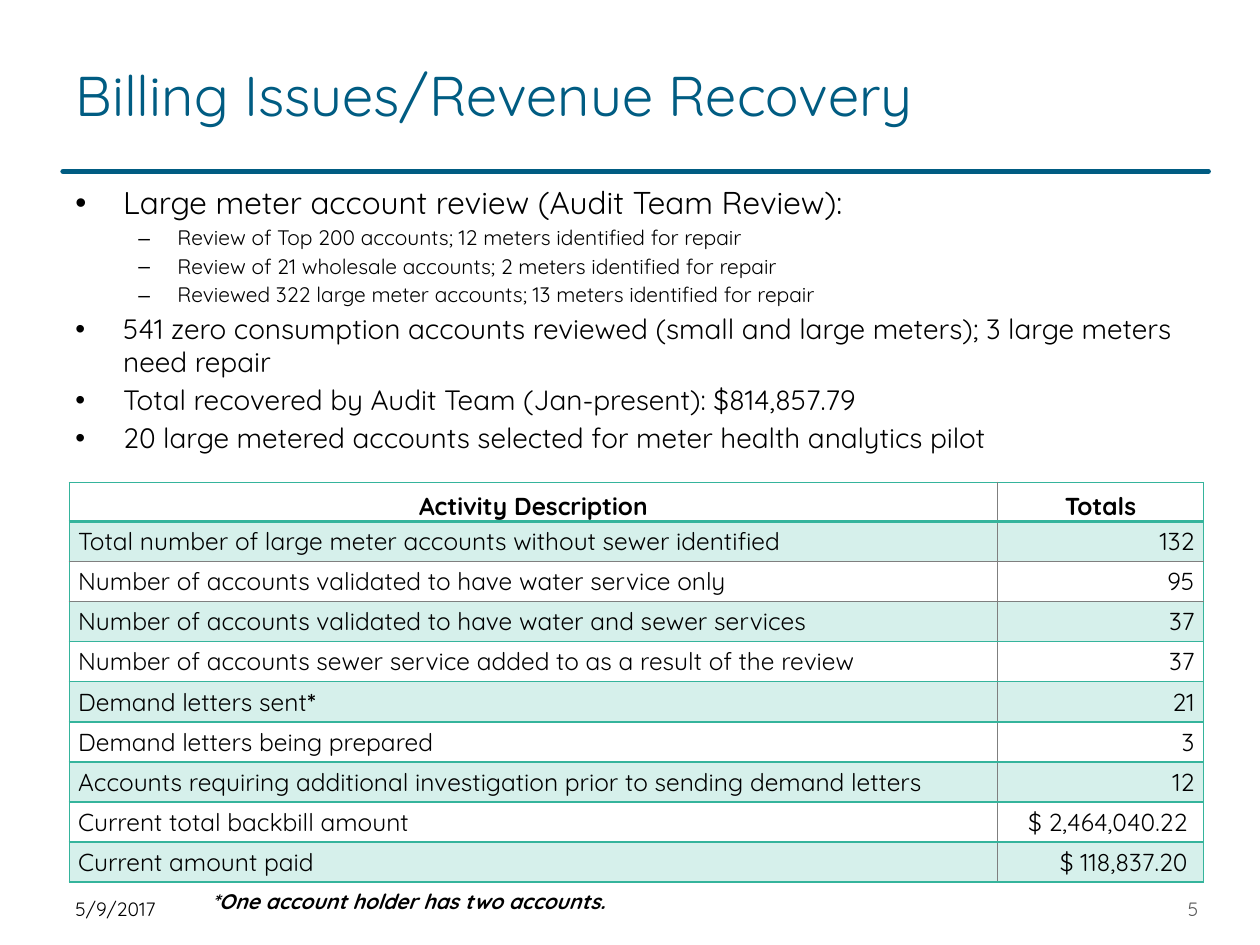
from lxml.etree import SubElement
from pptx import Presentation
from pptx.dml.color import RGBColor
from pptx.enum.shapes import MSO_CONNECTOR
from pptx.enum.text import MSO_ANCHOR, PP_ALIGN
from pptx.oxml.ns import qn
from pptx.util import Inches, Pt

FONT = "Quicksand"
BLACK = "000000"
GRAY = "595959"
BLUE = "005C82"
GREEN = "35B49C"
RULE_GRAY = "7F7F7F"

BULLETS = [
    (0, 18, "Large meter account review (Audit Team Review):"),
    (1, 12, "Review of Top 200 accounts; 12 meters identified for repair"),
    (1, 12, "Review of 21 wholesale accounts; 2 meters identified for repair"),
    (1, 12, "Reviewed 322 large meter accounts; 13 meters identified for repair"),
    (0, 16, "541 zero consumption accounts reviewed (small and large meters); "
            "3 large meters need repair"),
    (0, 16, "Total recovered by Audit Team (Jan-present): $814,857.79"),
    (0, 16, "20 large metered accounts selected for meter health analytics pilot"),
]
BULLET_STYLES = [("•", 0.38, 0.38), ("–", 0.81, 0.31)]

HEADINGS = ("Activity Description", "Totals")
ACTIVITIES = [
    ("Total number of large meter accounts without sewer identified", "132"),
    ("Number of accounts validated to have water service only", "95"),
    ("Number of accounts validated to have water and sewer services", "37"),
    ("Number of accounts sewer service added to as a result of the review", "37"),
    ("Demand letters sent*", "21"),
    ("Demand letters being prepared", "3"),
    ("Accounts requiring additional investigation prior to sending demand letters", "12"),
    ("Current total backbill amount", "$ 2,464,040.22 "),
    ("Current amount paid", "$ 118,837.20 "),
]


def color(value):
    return RGBColor.from_string(value)


def add_run(paragraph, text, size, fill=BLACK, bold=False, italic=False):
    run = paragraph.add_run()
    run.text = text
    font = run.font
    font.name, font.size = FONT, Pt(size)
    font.bold, font.italic = bold, italic
    font.color.rgb = color(fill)


def add_text_box(slide, box, anchor=MSO_ANCHOR.TOP, vertical_margin=0.05):
    shape = slide.shapes.add_textbox(*map(Inches, box))
    frame = shape.text_frame
    frame.word_wrap = True
    frame.vertical_anchor = anchor
    frame.margin_top = frame.margin_bottom = Inches(vertical_margin)
    return frame


def add_title(slide, box, text):
    title = slide.shapes.title
    title.left, title.top, title.width, title.height = map(Inches, box)
    title.text_frame.vertical_anchor = MSO_ANCHOR.MIDDLE
    paragraph = title.text_frame.paragraphs[0]
    paragraph.alignment = PP_ALIGN.LEFT
    add_run(paragraph, text, 32, BLUE)


def add_divider(slide, left, top, width):
    line = slide.shapes.add_connector(
        MSO_CONNECTOR.STRAIGHT, Inches(left), Inches(top), Inches(left + width), Inches(top))
    line.line.color.rgb = color(BLUE)
    line.line.width = Pt(3)
    properties = line._element.spPr
    properties.find(qn("a:ln")).set("cap", "rnd")
    SubElement(properties, qn("a:effectLst"))


def add_bullets(slide, box, items):
    frame = add_text_box(slide, box)
    for index, (level, size, text) in enumerate(items):
        paragraph = frame.paragraphs[0] if index == 0 else frame.add_paragraph()
        mark, margin, hanging = BULLET_STYLES[level]
        paragraph.level = level
        paragraph.line_spacing = 0.97
        if index:
            paragraph.space_before = Pt(size * 0.2)
        properties = paragraph._p.get_or_add_pPr()
        properties.set("marL", str(Inches(margin)))
        properties.set("indent", str(-Inches(hanging)))
        SubElement(properties, qn("a:buFont"), typeface="Arial")
        SubElement(properties, qn("a:buChar"), char=mark)
        add_run(paragraph, text, size)


def set_borders(cell, sides):
    properties = cell._tc.get_or_add_tcPr()
    for position, side in enumerate(("L", "R", "T", "B")):
        line_color, width = sides[side]
        line = properties.makeelement(qn(f"a:ln{side}"), {"w": str(Pt(width))})
        fill = SubElement(line, qn("a:solidFill"))
        SubElement(fill, qn("a:srgbClr"), val=line_color)
        properties.insert(position, line)


def fill_cell(cell, banded):
    if not banded:
        cell.fill.background()
        return
    cell.fill.solid()
    cell.fill.fore_color.rgb = color(GREEN)
    tint = cell._tc.tcPr.find(f".//{qn('a:srgbClr')}")
    SubElement(tint, qn("a:alpha"), val="20000")


def horizontal_border(edge):
    if edge == 1:
        return GREEN, 2
    return (RULE_GRAY, 0.5) if edge in (2, 3) else (GREEN, 1)


def add_activity_table(slide, box, headings, activities):
    left, top, width, height = box
    rows = [headings, *activities]
    table = slide.shapes.add_table(len(rows), 2, *map(Inches, box)).table
    totals_width, header_height = 1.63, 0.31
    table.columns[0].width = Inches(width - totals_width)
    table.columns[1].width = Inches(totals_width)
    row_height = (height - header_height) / len(activities)
    outer, inner = (GREEN, 1), (RULE_GRAY, 0.5)
    for row_index, values in enumerate(rows):
        header = row_index == 0
        table.rows[row_index].height = Inches(header_height if header else row_height)
        for column, text in enumerate(values):
            cell = table.cell(row_index, column)
            cell.margin_left = cell.margin_right = Inches(0.07)
            cell.margin_top = cell.margin_bottom = 0
            cell.vertical_anchor = MSO_ANCHOR.BOTTOM if header else MSO_ANCHOR.MIDDLE
            fill_cell(cell, row_index % 2 == 1)
            set_borders(cell, {
                "L": inner if column else outer,
                "R": outer if column else inner,
                "T": horizontal_border(row_index),
                "B": horizontal_border(row_index + 1),
            })
            paragraph = cell.text_frame.paragraphs[0]
            body_alignment = PP_ALIGN.RIGHT if column else PP_ALIGN.LEFT
            paragraph.alignment = PP_ALIGN.CENTER if header else body_alignment
            label, star, _ = text.partition("*")
            add_run(paragraph, label, 14, bold=header)
            if star:
                add_run(paragraph, star, 14, bold=True)


def add_footer(slide, box, date, number):
    left, top, width, height = box
    date_width, number_width = 1.97, 0.84
    parts = [
        (left, date_width, date, BLACK, PP_ALIGN.LEFT),
        (left + width - number_width, number_width, number, GRAY, PP_ALIGN.RIGHT),
    ]
    for part_left, part_width, text, fill, alignment in parts:
        frame = add_text_box(slide, (part_left, top, part_width, height), MSO_ANCHOR.MIDDLE, 0)
        frame.paragraphs[0].alignment = alignment
        add_run(frame.paragraphs[0], text, 11, fill)


def add_footnote(slide, box, text):
    frame = add_text_box(slide, box)
    add_run(frame.paragraphs[0], text, 12, bold=True, italic=True)


def main():
    presentation = Presentation()
    presentation.slide_width, presentation.slide_height = Inches(10), Inches(7.5)
    slide = presentation.slides.add_slide(presentation.slide_layouts[5])
    add_footer(slide, (0.5, 7.11, 9.11, 0.21), "5/9/2017", "5")
    add_divider(slide, 0.5, 1.36, 9.09)
    add_title(slide, (0.5, 0.3, 7.73, 0.9), "Billing Issues/Revenue Recovery")
    add_bullets(slide, (0.5, 1.42, 9, 5.45), BULLETS)
    add_activity_table(slide, (0.55, 3.83, 9, 3.17), HEADINGS, ACTIVITIES)
    add_footnote(slide, (1.58, 7, 7, 0.3), "*One account holder has two accounts.")
    presentation.save("out.pptx")


if __name__ == "__main__":
    main()
